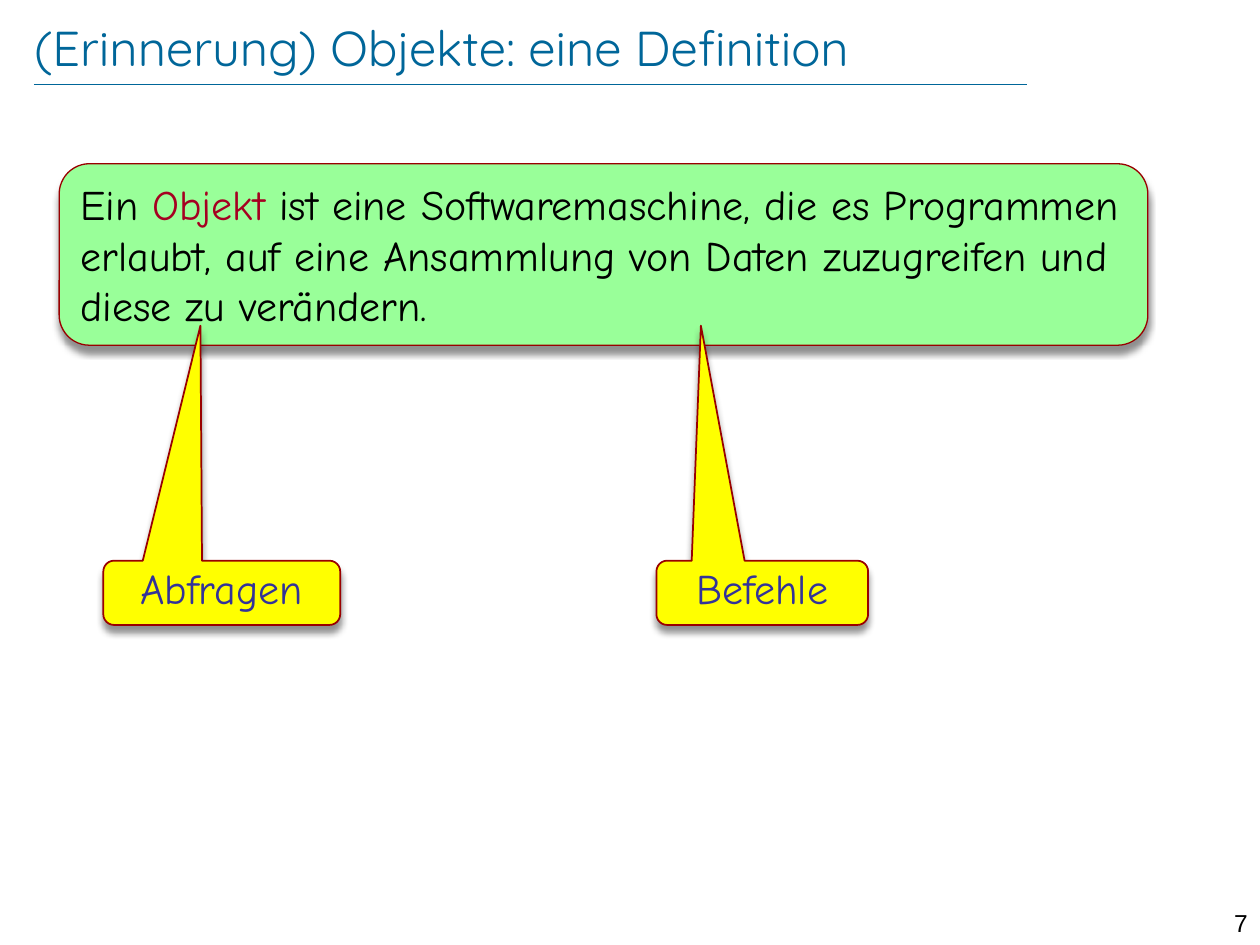
from lxml import etree
from pptx import Presentation
from pptx.dml.color import RGBColor
from pptx.enum.shapes import MSO_CONNECTOR, MSO_SHAPE
from pptx.enum.text import MSO_ANCHOR, PP_ALIGN
from pptx.oxml import parse_xml
from pptx.oxml.ns import nsdecls, qn
from pptx.util import Inches, Pt

BLUE = RGBColor(0x00, 0x66, 0x99)
BLACK = RGBColor(0x00, 0x00, 0x00)
GREEN = RGBColor(0x99, 0xFF, 0x99)
YELLOW = RGBColor(0xFF, 0xFF, 0x00)
MAROON = RGBColor(0x99, 0x00, 0x00)
RED = RGBColor(0xA5, 0x00, 0x21)
INDIGO = RGBColor(0x33, 0x33, 0x99)

LEFT, CENTER, RIGHT = PP_ALIGN.LEFT, PP_ALIGN.CENTER, PP_ALIGN.RIGHT
TOP, MIDDLE = MSO_ANCHOR.TOP, MSO_ANCHOR.MIDDLE
ROUND = MSO_SHAPE.ROUNDED_RECTANGLE
CALLOUT = MSO_SHAPE.ROUNDED_RECTANGULAR_CALLOUT
STRAIGHT = MSO_CONNECTOR.STRAIGHT

SHADOW = (
    f'<a:effectLst {nsdecls("a")}>'
    '<a:outerShdw blurRad="50800" dist="50800" dir="5400000" rotWithShape="0">'
    '<a:srgbClr val="000000"><a:alpha val="43000"/></a:srgbClr>'
    '</a:outerShdw></a:effectLst>'
)


def set_all(target, values):
    for name, value in values.items():
        setattr(target, name, value)


def write(shape, runs, font, size, align=LEFT, anchor=TOP, inset=(0.1, 0.05), space=1):
    """Fill a shape with one paragraph of (text, colour) runs."""
    frame = shape.text_frame
    side, edge = map(Inches, inset)
    set_all(frame, {
        "word_wrap": True, "vertical_anchor": anchor,
        "margin_left": side, "margin_right": side,
        "margin_top": edge, "margin_bottom": edge,
    })
    para = frame.paragraphs[0]
    set_all(para, {"alignment": align, "line_spacing": space})
    for text, color in runs:
        run = para.add_run()
        run.text = text
        set_all(run.font, {"name": font, "size": Pt(size)})
        run.font.color.rgb = color


def add_label(slide, box, *args, **style):
    write(slide.shapes.add_textbox(*map(Inches, box)), *args, **style)


def add_panel(slide, kind, box, fill, width):
    """Add a filled shape with a maroon outline and a soft shadow."""
    shape = slide.shapes.add_shape(kind, *map(Inches, box))
    shape.fill.solid()
    shape.fill.fore_color.rgb = fill
    shape.line.color.rgb = MAROON
    shape.line.width = Pt(width)
    shape.shadow.inherit = False
    props = shape.element.spPr
    props.replace(props.find(qn("a:effectLst")), parse_xml(SHADOW))
    return shape


def add_callout(slide, text, left, width, tip):
    """Add a yellow callout whose tip lies at a share of its width from the middle."""
    shape = add_panel(slide, CALLOUT, (left, 4.45, width, 0.51), YELLOW, 1)
    shape.adjustments[0] = tip
    shape.adjustments[1] = -4.16
    write(shape, [(text, INDIGO)], "Comic Neue", 24, CENTER, MIDDLE, (0, 0.05), 0.8)


def add_rule(slide):
    rule = slide.shapes.add_connector(
        STRAIGHT, Inches(0.27), Inches(0.67), Inches(8.15), Inches(0.67))
    rule.line.color.rgb = BLUE
    rule.line.width = Pt(0.25)
    etree.SubElement(rule.element.spPr, qn("a:effectLst"))


def main():
    deck = Presentation()
    set_all(deck, {"slide_width": Inches(10), "slide_height": Inches(7.5)})
    slide = deck.slides.add_slide(deck.slide_layouts[6])

    add_rule(slide)
    add_label(slide, (9.45, 7.16, 0.55, 0.24), [("7", BLACK)], "Arial", 14, RIGHT)
    add_label(slide, (0.27, 0.13, 8.88, 0.48),
              [("(Erinnerung) Objekte: eine Definition", BLUE)],
              "Quicksand", 28, anchor=MIDDLE, inset=(0, 0))

    panel = add_panel(slide, ROUND, (0.47, 1.3, 8.64, 1.44), GREEN, 0.75)
    write(panel, [
        ("Ein ", BLACK),
        ("Objekt", RED),
        (" ist eine Softwaremaschine, die es Programmen erlaubt, auf eine "
         "Ansammlung von Daten zuzugreifen und diese zu verändern.", BLACK),
    ], "Comic Neue", 24)

    add_callout(slide, "Abfragen", 0.82, 1.88, -0.09)
    add_callout(slide, "Befehle", 5.21, 1.68, -0.29)
    deck.save("out.pptx")


if __name__ == "__main__":
    main()
